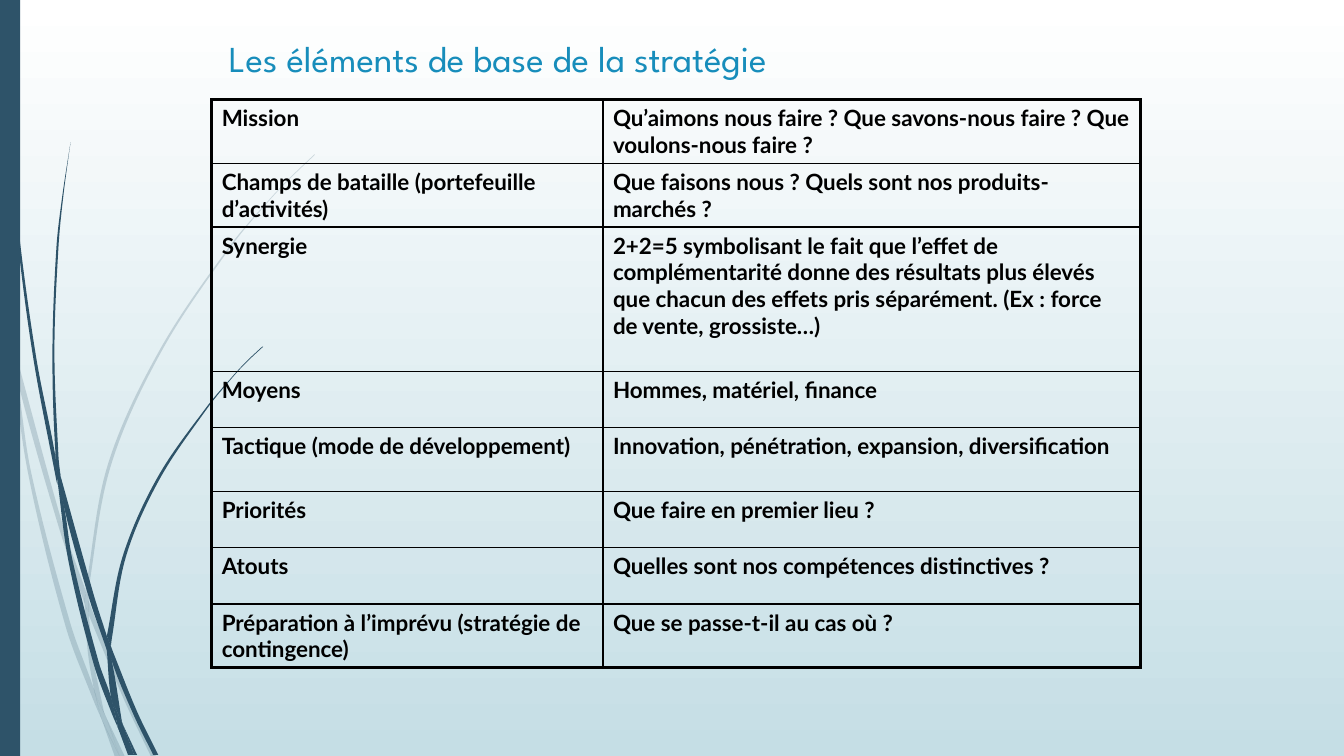
import math
import lxml.etree
import pptx
import pptx.dml.color
import pptx.enum.shapes
import pptx.enum.text
import pptx.oxml.ns
import pptx.util
from pptx.dml.color import RGBColor
from pptx.util import Inches

NAVY = RGBColor(0x2E, 0x53, 0x69)
BLUE = RGBColor(0x17, 0x8D, 0xBB)
BLACK = RGBColor(0, 0, 0)
WHITE = RGBColor(0xFF, 0xFF, 0xFF)
MIST = RGBColor(0xC5, 0xDE, 0xE5)

# Pieces of the grass stems: one edge, then the opposite edge back
PALE_STEMS = [
    ([(0, 2.82), (0.09, 3.22), (0.11, 3.5)], [(0.11, 3.5), (0.1, 3.44), (0, 2.99)]),
    ([(0.14, 3.45), (0.17, 3.76), (0.58, 5.22), (0.84, 5.99)],
     [(0.85, 5.86), (0.62, 5.2), (0.14, 3.45)]),
    ([(0.88, 6.1), (1.23, 6.94), (1.5, 7.51)],
     [(1.55, 7.51), (1.27, 6.92), (0.92, 6.07), (0.88, 5.96)]),
    ([(1.05, 7.11), (1.19, 7.51)], [(1.24, 7.51), (1.05, 7.11)]),
    ([(0.11, 3.5), (0.28, 4.7), (0.65, 6.21), (0.92, 6.93), (1.01, 7.14)],
     [(0.99, 7.07), (0.93, 6.83), (0.7, 6.19), (0.31, 4.69), (0.17, 3.76), (0.11, 3.5)]),
    ([(0.84, 5.99), (0.87, 6.46), (0.93, 6.83), (0.96, 6.92), (1.05, 7.11)],
     [(1.03, 7.06), (0.91, 6.46), (0.88, 6.1), (0.84, 5.99)]),
    ([(3.12, 1.53), (2.89, 1.75), (2.68, 1.97), (2.28, 2.44), (1.58, 3.48), (1.07, 4.61),
      (0.85, 5.84)],
     [(0.88, 5.96), (0.88, 5.84), (1.1, 4.62), (1.6, 3.49), (2.29, 2.45), (2.68, 1.98),
      (2.9, 1.75), (3.12, 1.54)]),
    ([(1.01, 7.14), (1.14, 7.51)], [(1.19, 7.51), (1.01, 7.14)]),
    ([(0.85, 5.86), (0.84, 5.99), (0.88, 6.08)], [(0.88, 6.1), (0.88, 5.96), (0.85, 5.86)]),
    ([(0.93, 6.83), (0.99, 7.07), (1.01, 7.14), (1.19, 7.51)],
     [(1.19, 7.51), (1.05, 7.11), (0.96, 6.92), (0.93, 6.83)]),
]
DARK_STEMS = [
    ([(0.03, 0), (0.04, 0.48), (0.07, 1.1), (0.17, 2.33), (0.33, 3.55), (0.56, 4.77)],
     [(0.57, 4.81), (0.55, 4.53), (0.36, 3.55), (0.19, 2.32), (0.08, 1.09), (0.05, 0.48),
      (0.04, 0)]),
    ([(0.6, 4.72), (0.64, 5.05), (0.88, 5.92), (1.06, 6.45)],
     [(1.06, 6.31), (0.93, 5.9), (0.6, 4.72)]),
    ([(1.1, 6.41), (1.11, 6.56), (1.32, 7.08), (1.52, 7.49)],
     [(1.57, 7.49), (1.36, 7.06), (1.13, 6.49), (1.1, 6.41)]),
    ([(0.57, 4.77), (0.68, 5.57), (0.93, 6.59), (1.11, 7.08), (1.17, 7.22)],
     [(1.16, 7.17), (1.1, 6.91), (0.98, 6.57), (0.72, 5.56), (0.64, 5.05), (0.57, 4.77)]),
    ([(0.7, 1.41), (0.62, 1.93), (0.56, 2.45), (0.52, 3.49), (0.55, 4.49), (0.6, 4.72)],
     [(0.6, 4.72), (0.58, 4.53), (0.54, 3.49), (0.58, 2.45), (0.63, 1.93), (0.7, 1.41)]),
    ([(1.22, 7.19), (1.33, 7.49)], [(1.36, 7.49), (1.22, 7.19)]),
    ([(0.55, 4.49), (0.55, 4.53), (0.57, 4.77), (0.64, 5.05)],
     [(0.64, 5.05), (0.6, 4.72), (0.55, 4.49)]),
    ([(2.6, 3.44), (2.45, 3.58), (2.31, 3.73), (2.04, 4.05), (1.56, 4.74), (1.22, 5.51),
      (1.06, 6.31)],
     [(1.1, 6.41), (1.11, 6.33), (1.25, 5.52), (1.58, 4.76), (2.05, 4.06), (2.31, 3.74),
      (2.45, 3.59), (2.61, 3.44)]),
    ([(1.17, 7.22), (1.27, 7.49)], [(1.31, 7.49), (1.17, 7.22)]),
    ([(1.06, 6.45), (1.1, 6.91), (1.16, 7.06), (1.22, 7.19)],
     [(1.21, 7.16), (1.11, 6.56), (1.06, 6.45)]),
    ([(1.06, 6.31), (1.06, 6.45), (1.11, 6.56)], [(1.11, 6.56), (1.1, 6.41), (1.06, 6.31)]),
    ([(1.1, 6.91), (1.16, 7.17), (1.17, 7.22), (1.3, 7.49)],
     [(1.33, 7.49), (1.22, 7.19), (1.16, 7.06), (1.1, 6.91)]),
]

COLUMN_WIDTHS = [3.88, 5.33]
ROWS = [
    (0.63, "Mission", "Qu’aimons nous faire ? Que savons-nous faire ? Que voulons-nous faire ?"),
    (0.63, "Champs de bataille (portefeuille d’activités)",
     "Que faisons nous ? Quels sont nos produits-marchés ?"),
    (1.43, "Synergie",
     "2+2=5 symbolisant le fait que l’effet de complémentarité donne des résultats plus élevés "
     "que chacun des effets pris séparément. (Ex : force de vente, grossiste…)"),
    (0.56, "Moyens", "Hommes, matériel, finance"),
    (0.63, "Tactique (mode de développement)", "Innovation, pénétration, expansion, diversification"),
    (0.56, "Priorités", "Que faire en premier lieu ?"),
    (0.56, "Atouts", "Quelles sont nos compétences distinctives ?"),
    (0.63, "Préparation à l’imprévu (stratégie de contingence)", "Que se passe-t-il au cas où ?"),
]


def paint_background(s):
    fill = s.background.fill
    fill.gradient()
    fill.gradient_angle = 270
    for stop, color, position in zip(fill.gradient_stops, (WHITE, MIST), (0, 1)):
        stop.color.rgb, stop.position = color, position


def paint_shape(sp, color, alpha=100):
    sp.shadow.inherit = False
    sp.line.fill.background()
    sp.fill.solid()
    sp.fill.fore_color.rgb = color
    if alpha < 100:
        clr = sp._element.spPr.find(".//" + pptx.oxml.ns.qn("a:srgbClr"))
        lxml.etree.SubElement(clr, pptx.oxml.ns.qn("a:alpha"), val=str(alpha * 1000))


def handle(start, before, after, length):
    """Control point at a third of length, along the direction from before to after."""
    scale = length / 3 / (math.dist(before, after) or 1)
    return tuple(p + (b - a) * scale for p, a, b in zip(start, before, after))


def curve_points(edge):
    """Two control points and an end for each segment of a smooth edge."""
    ends = [edge[0]] + edge + [edge[-1]]
    points = []
    for a, b, c, d in zip(ends, ends[1:], ends[2:], ends[3:]):
        length = math.dist(b, c)
        points += [handle(b, a, c, length), handle(c, d, b, length), c]
    return points


def add_stem(s, edge, back, alpha):
    points = curve_points(edge) + [edge[-1], back[0], back[0]] + curve_points(back)
    builder = s.shapes.build_freeform(Inches(edge[0][0]), Inches(edge[0][1]))
    builder.add_line_segments([(Inches(x), Inches(y)) for x, y in points], close=True)
    sp = builder.convert_to_shape()
    # Turn each three line segments into one Bézier curve
    lines = list(sp._element.iter(pptx.oxml.ns.qn("a:lnTo")))
    for first, second, third in zip(lines[::3], lines[1::3], lines[2::3]):
        curve = lxml.etree.Element(pptx.oxml.ns.qn("a:cubicBezTo"))
        first.addprevious(curve)
        for line in (first, second, third):
            curve.append(line[0])
            line.getparent().remove(line)
    paint_shape(sp, NAVY, alpha)


def set_font(font, name, size, color, bold):
    font.name, font.size, font.bold = name, pptx.util.Pt(size), bold
    font.color.rgb = color


def format_title(s, text):
    sp = s.shapes.title
    sp.left, sp.top, sp.width, sp.height = Inches(2.17), Inches(0.3), Inches(9), Inches(0.38)
    tf = sp.text_frame
    tf.text = text
    tf.vertical_anchor = pptx.enum.text.MSO_ANCHOR.TOP
    tf.margin_top = Inches(0.06)
    p = tf.paragraphs[0]
    p.alignment = pptx.enum.text.PP_ALIGN.LEFT
    set_font(p.font, "League Spartan", 26.1, BLUE, False)


def set_border(cell, side, points):
    tcPr = cell._tc.get_or_add_tcPr()
    ln = lxml.etree.SubElement(tcPr, pptx.oxml.ns.qn("a:ln" + side), w=str(pptx.util.Pt(points)))
    fill = lxml.etree.SubElement(ln, pptx.oxml.ns.qn("a:solidFill"))
    lxml.etree.SubElement(fill, pptx.oxml.ns.qn("a:srgbClr"), val=str(BLACK))


def add_strategy_table(s):
    table = s.shapes.add_table(len(ROWS), len(COLUMN_WIDTHS), Inches(2.1), Inches(0.99),
                               Inches(9.21), Inches(5.63)).table
    table.first_row = table.horz_banding = False
    for column, width in zip(table.columns, COLUMN_WIDTHS):
        column.width = Inches(width)
    for i, (height, *texts) in enumerate(ROWS):
        table.rows[i].height = Inches(height)
        for j, text in enumerate(texts):
            cell = table.cell(i, j)
            cell.text = text
            set_font(cell.text_frame.paragraphs[0].font, "Lato", 16, BLACK, True)
            # Thick frame outside, thin rules inside
            outer = {"L": j == 0, "R": j == len(texts) - 1, "T": i == 0, "B": i == len(ROWS) - 1}
            for side, is_outer in outer.items():
                set_border(cell, side, 2.25 if is_outer else 1)
            cell.fill.background()


def main():
    prs = pptx.Presentation()
    prs.slide_width, prs.slide_height = Inches(13.33), Inches(7.5)
    s = prs.slides.add_slide(prs.slide_layouts[5])
    paint_background(s)
    # Side decoration
    for stems, alpha in ((PALE_STEMS, 20), (DARK_STEMS, 100)):
        for edge, back in stems:
            add_stem(s, edge, back, alpha)
    bar = s.shapes.add_shape(pptx.enum.shapes.MSO_SHAPE.RECTANGLE, 0, 0, Inches(0.2), Inches(7.5))
    paint_shape(bar, NAVY)
    # Content
    format_title(s, "Les éléments de base de la stratégie")
    add_strategy_table(s)
    prs.save("out.pptx")


if __name__ == "__main__":
    main()
